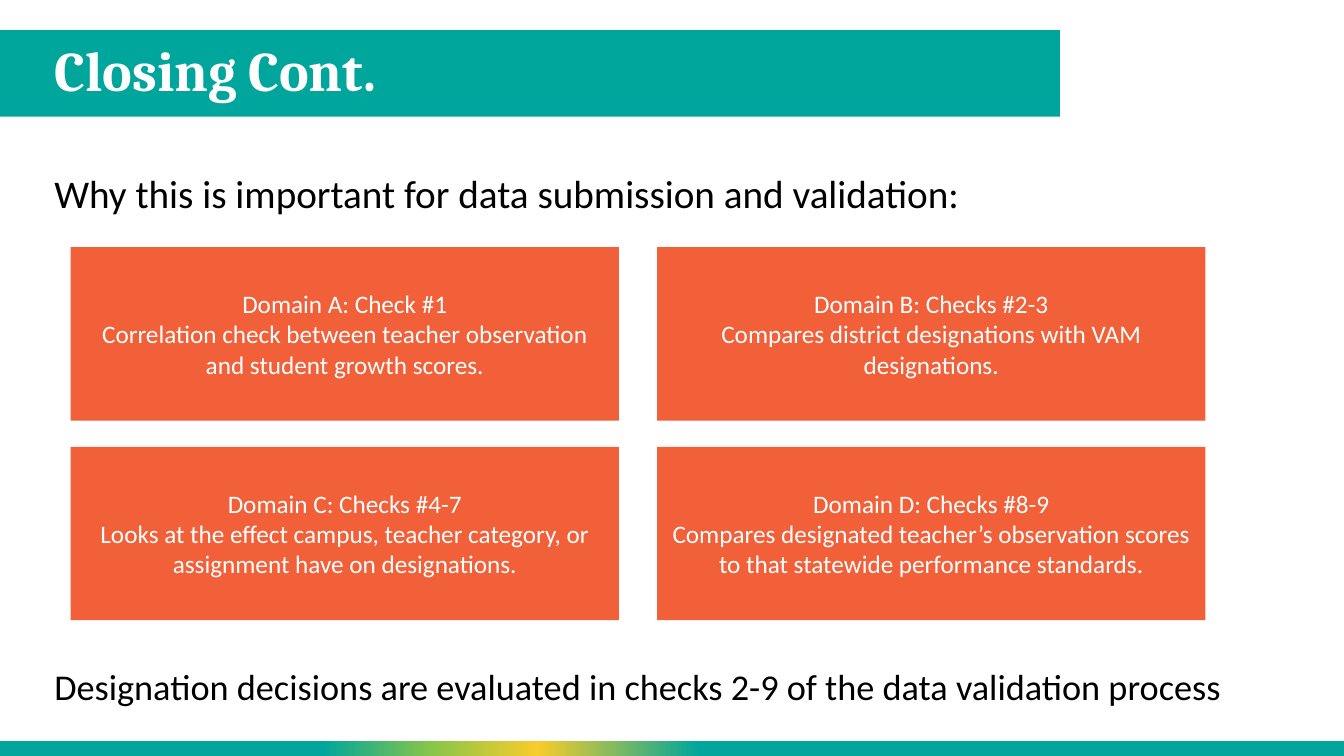
from lxml import etree
from pptx import Presentation
from pptx.dml.color import RGBColor
from pptx.enum.shapes import MSO_SHAPE as Shape
from pptx.enum.text import MSO_ANCHOR as Anchor, PP_ALIGN as Align
from pptx.oxml.ns import qn
from pptx.util import Cm, Pt

WIDTH, HEIGHT = 33.87, 19.05
TEAL, GREEN, YELLOW = "00A69B", "87C54A", "F8CC2B"
ORANGE, WHITE, BLACK = "F16038", "FFFFFF", "000000"
STRIPE_STOPS = [(0, TEAL), (24, TEAL), (32, GREEN), (40, YELLOW), (52, TEAL), (100, TEAL)]
CHECKS = [
    ("Domain A: Check #1",
     "Correlation check between teacher observation and student growth scores."),
    ("Domain B: Checks #2-3",
     "Compares district designations with VAM designations."),
    ("Domain C: Checks #4-7",
     "Looks at the effect campus, teacher category, or assignment have on designations."),
    ("Domain D: Checks #8-9",
     "Compares designated teacher’s observation scores to that statewide performance standards."),
]


def color(value):
    return RGBColor.from_string(value)


def add_rectangle(slide, left, top, width, height, fill):
    shape = slide.shapes.add_shape(
        Shape.RECTANGLE, Cm(left), Cm(top), Cm(width), Cm(height))
    shape.shadow.inherit = False
    shape.fill.solid()
    shape.fill.fore_color.rgb = color(fill)
    shape.line.fill.background()
    return shape


def add_run(paragraph, text, size, ink, font="Calibri", bold=False):
    run = paragraph.add_run()
    run.text = text
    run.font.name = font
    run.font.size = Pt(size)
    run.font.bold = bold
    run.font.color.rgb = color(ink)


def add_line_of_text(slide, left, top, width, height, text, size, ink,
                     anchor=Anchor.TOP, **style):
    box = slide.shapes.add_textbox(Cm(left), Cm(top), Cm(width), Cm(height))
    frame = box.text_frame
    frame.word_wrap = True
    frame.vertical_anchor = anchor
    paragraph = frame.paragraphs[0]
    paragraph.line_spacing = 0.9
    add_run(paragraph, text, size, ink, **style)


def add_title_band(slide, left, top, width, height):
    add_rectangle(slide, left, top, width, height, TEAL)
    indent = 1.12
    add_line_of_text(slide, left + indent, top, width - indent, height, "Closing Cont.",
                     40, WHITE, Anchor.MIDDLE, font="Cambria", bold=True)


def add_footer_stripe(slide, left, top, width, height):
    stripe = add_rectangle(slide, left, top, width, height, TEAL)
    stripe.fill.gradient()
    stripe.fill.gradient_angle = 0
    # Replace the two default stops
    stop_list = next(stripe.element.iter(qn("a:gsLst")))
    for stop in list(stop_list):
        stop_list.remove(stop)
    for position, value in STRIPE_STOPS:
        stop = etree.SubElement(stop_list, qn("a:gs"), pos=str(position * 1000))
        etree.SubElement(stop, qn("a:srgbClr"), val=value)


def add_check_grid(slide, left, top, width, height, column_gap=0.96, row_gap=0.66):
    card_width = (width - column_gap) / 2
    card_height = (height - row_gap) / 2
    for index, lines in enumerate(CHECKS):
        row, column = divmod(index, 2)
        card = add_rectangle(slide, left + column * (card_width + column_gap),
                             top + row * (card_height + row_gap),
                             card_width, card_height, ORANGE)
        frame = card.text_frame
        frame.word_wrap = True
        frame.vertical_anchor = Anchor.MIDDLE
        for number, line in enumerate(lines):
            paragraph = frame.add_paragraph() if number else frame.paragraphs[0]
            paragraph.alignment = Align.CENTER
            add_run(paragraph, line, 18, WHITE)


def main():
    presentation = Presentation()
    presentation.slide_width, presentation.slide_height = Cm(WIDTH), Cm(HEIGHT)
    slide = presentation.slides.add_slide(presentation.slide_layouts[6])

    # Title band and footer stripe
    add_title_band(slide, 0, 0.76, 26.71, 2.18)
    add_footer_stripe(slide, 0, HEIGHT - 0.38, WIDTH, 0.38)

    # Lead-in, four checks and conclusion
    add_line_of_text(slide, 1.12, 4.27, 31.6, 1.5,
                     "Why this is important for data submission and validation:", 28, BLACK)
    add_check_grid(slide, 1.78, 6.23, 28.6, 9.4)
    add_line_of_text(
        slide, 1.12, 16.74, 30.86, 1.52,
        "Designation decisions are evaluated in checks 2-9 of the data validation process",
        25.9, BLACK)

    presentation.save("out.pptx")


if __name__ == "__main__":
    main()
